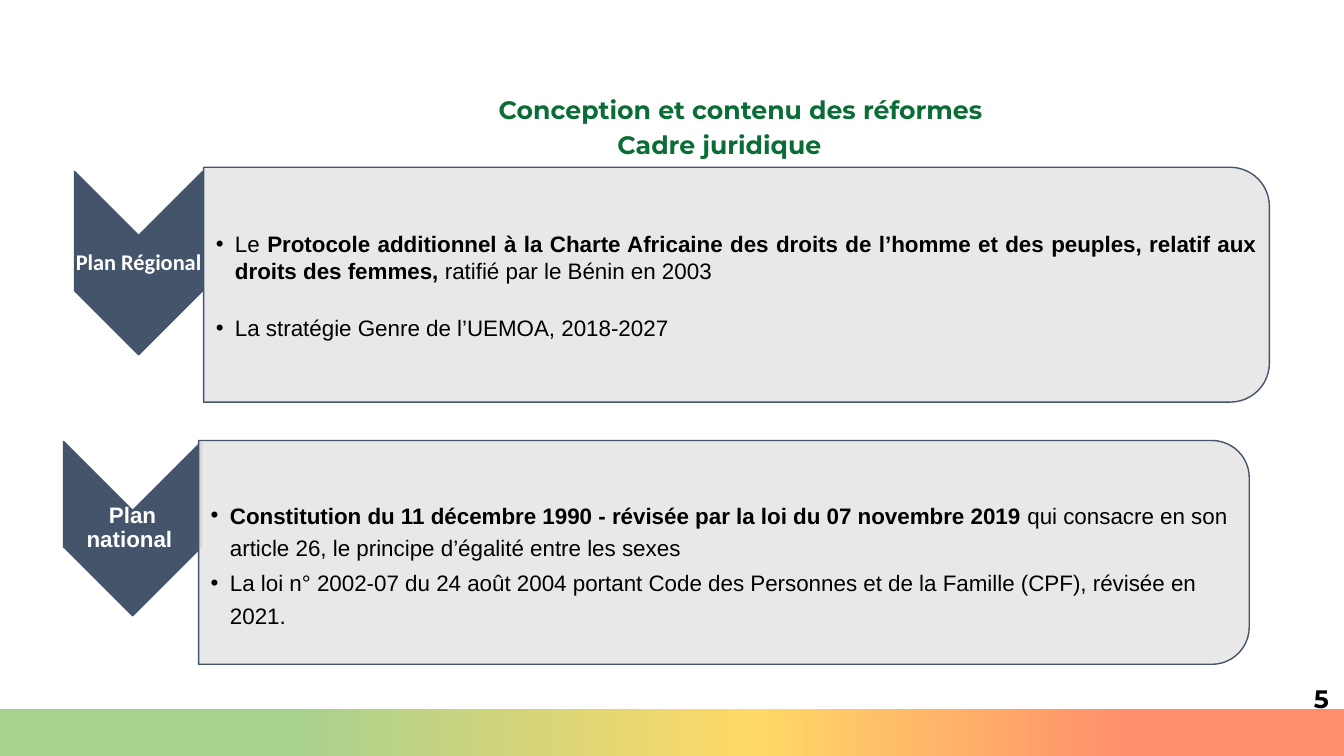
"""Build the slide on the legal framework of the reforms."""
from copy import deepcopy

from lxml import etree
from pptx import Presentation
from pptx import util as u
from pptx.dml.color import RGBColor
from pptx.enum import shapes, text
from pptx.oxml import ns

PX = 9144
WIDE, HIGH = 1333, 750
GREEN = RGBColor(0x0A, 0x6D, 0x36)
SLATE = RGBColor(0x44, 0x54, 0x6A)
GRAY = RGBColor(0xE7, 0xE6, 0xE6)
BLACK = RGBColor(0, 0, 0)
WHITE = RGBColor(255, 255, 255)
STOPS = [(0.22, RGBColor(0xA9, 0xD1, 0x8E)),
         (0.56, RGBColor(0xFF, 0xD9, 0x66)),
         (0.84, RGBColor(0xFF, 0x8F, 0x6B))]
FORM = shapes.MSO_SHAPE
MID = text.MSO_ANCHOR.MIDDLE
TOP = text.MSO_ANCHOR.TOP
ALIGN = text.PP_ALIGN
INSET = (10, 5, 10, 5)
TIGHT = (1, 1, 1, 1)

REGION = [
    [("Le ", False),
     ("Protocole additionnel à la Charte Africaine des droits de l’homme et "
      "des peuples, relatif aux droits des femmes, ", True),
     ("ratifié par le Bénin en 2003 ", False)],
    [("La stratégie Genre de l’UEMOA, 2018-2027", False)],
]
NATION = [
    [("Constitution du 11 décembre 1990 - révisée par la loi du 07 novembre "
      "2019", True),
     (" qui consacre en son article 26, le principe d’égalité entre les "
      "sexes", False)],
    [("La loi n° 2002-07 du 24 août 2004 portant Code des Personnes et de la "
      "Famille (CPF), révisée en 2021.", False)],
]


def apply(item, form):
    """Set each attribute named in a dict of format values."""
    for name, value in form.items():
        setattr(item, name, value)


def place(item, box):
    """Move an item to a box given in px."""
    names = ("left", "top", "width", "height")
    apply(item, {name: int(n * PX) for name, n in zip(names, box)})


def frame(item, anchor, inset):
    """Set up the text frame of an item and return it."""
    body = item.text_frame
    sides = ("margin_left", "margin_top", "margin_right", "margin_bottom")
    apply(body, {"word_wrap": True, "auto_size": text.MSO_AUTO_SIZE.NONE,
                 "vertical_anchor": anchor})
    apply(body, {side: n * PX for side, n in zip(sides, inset)})
    return body


def fill(para, runs, font, form):
    """Write runs of text and boldness into a paragraph."""
    apply(para, form)
    for words, bold in runs:
        run = para.add_run()
        run.text = words
        apply(run.font, {**font, "bold": bold})
        run.font.color.rgb = font_hue(font)


def font_hue(font):
    """Return the colour that goes with a font style."""
    return HUES[id(font)]


def style(name, size, hue):
    """Make a font style and note its colour."""
    font = {"name": name, "size": u.Pt(size)}
    HUES[id(font)] = hue
    return font


HUES = {}
HEAD = style("Montserrat", 18, GREEN)
PAGE = style("Montserrat", 18, BLACK)
LIST = style("Arial", 16, BLACK)
LABEL = style("Calibri", 16, WHITE)
LOCAL = style("Arial", 16, WHITE)


def blank(slide, box):
    """Add an empty text box at a box given in px."""
    item = slide.shapes.add_textbox(0, 0, 0, 0)
    place(item, box)
    return item


def turned(slide, kind, box, hue):
    """Add a shape turned a quarter so that it covers the given box."""
    x, y, w, h = box
    item = slide.shapes.add_shape(kind, 0, 0, 0, 0)
    place(item, (x + (w - h) / 2, y + (h - w) / 2, h, w))
    item.rotation = 90
    item.shadow.inherit = False
    item.fill.solid()
    item.fill.fore_color.rgb = hue
    item.line.color.rgb = SLATE
    item.line.width = u.Pt(1)
    return item


def line(item, words, font, anchor, inset, form):
    """Write one centred bold line into an item."""
    para = frame(item, anchor, inset).paragraphs[0]
    fill(para, [(words, True)], font, {"alignment": ALIGN.CENTER, **form})


def chevron(slide, box, words, font):
    """Draw a chevron that points down, with its label."""
    turned(slide, FORM.CHEVRON, box, SLATE)
    line(blank(slide, box), words, font, MID, TIGHT,
         {"line_spacing": 0.9, "space_after": u.Pt(5.6)})


def bullet(para):
    """Give a paragraph a hanging bullet."""
    props = para._p.get_or_add_pPr()
    props.set("marL", str(19 * PX))
    props.set("indent", str(-19 * PX))
    etree.SubElement(props, ns.qn("a:buChar")).set("char", "•")


def card(slide, body, box, shift, items, forms):
    """Draw a card with round right corners and lay its list on it."""
    x, y, w, h = box
    back = turned(slide, FORM.ROUND_2_SAME_RECTANGLE, box, GRAY)
    hue = back.element.spPr.find(ns.qn("a:solidFill"))[0]
    etree.SubElement(hue, ns.qn("a:alpha")).set("val", "90000")
    place(body, (x, y + shift, w - 11, h - 22))
    body.element.getparent().append(body.element)
    area = frame(body, MID, (12, 1, 1, 1))
    for n, (runs, form) in enumerate(zip(items, forms)):
        para = area.add_paragraph() if n else area.paragraphs[0]
        bullet(para)
        fill(para, runs, LIST,
             {"space_before": u.Pt(0), "space_after": u.Pt(2.4), **form})


def heading(slide, box):
    """Set the title and the line below it."""
    x, y, w, h = box
    form = {"line_spacing": 1.5, "space_before": u.Pt(0)}
    title = slide.shapes.title
    place(title, box)
    line(title, "Conception et contenu des réformes ", HEAD, TOP, INSET, form)
    below = blank(slide, (x - 21, y + 34, w, h))
    line(below, "Cadre juridique ", HEAD, TOP, INSET, form)


def footer(slide, box):
    """Draw the gradient band and the page number above it."""
    x, y, w, h = box
    band = slide.shapes.add_shape(FORM.RECTANGLE, 0, 0, 0, 0)
    place(band, box)
    band.shadow.inherit = False
    band.line.fill.background()
    band.fill.gradient()
    band.fill.gradient_angle = 0
    stops = band.element.spPr.find(".//" + ns.qn("a:gsLst"))
    stops.append(deepcopy(stops[0]))
    for stop, (spot, hue) in zip(band.fill.gradient_stops, STOPS):
        stop.position = spot
        stop.color.rgb = hue
    page = blank(slide, (x + w - 49, y - 30, 53, 40))
    line(page, "5", PAGE, TOP, INSET, {})


def main():
    """Build and save the slide."""
    deck = Presentation()
    deck.slide_width, deck.slide_height = WIDE * PX, HIGH * PX
    slide = deck.slides.add_slide(deck.slide_layouts[3])
    first, second = list(slide.placeholders)[1:]
    footer(slide, (0, 703, WIDE, 47))
    chevron(slide, (74, 170, 127, 182), "Plan Régional", LABEL)
    both = {"alignment": ALIGN.JUSTIFY}
    card(slide, first, (202, 166, 1057, 233), 12, REGION,
         [both, {**both, "line_spacing": 0.9, "space_before": u.Pt(21)}])
    chevron(slide, (63, 438, 137, 173), "Plan national ", LOCAL)
    card(slide, second, (197, 437, 1042, 222), 21, NATION,
         [{"line_spacing": 1.2}] * 2)
    heading(slide, (404, 74, 668, 50))
    deck.save("out.pptx")


if __name__ == "__main__":
    main()
